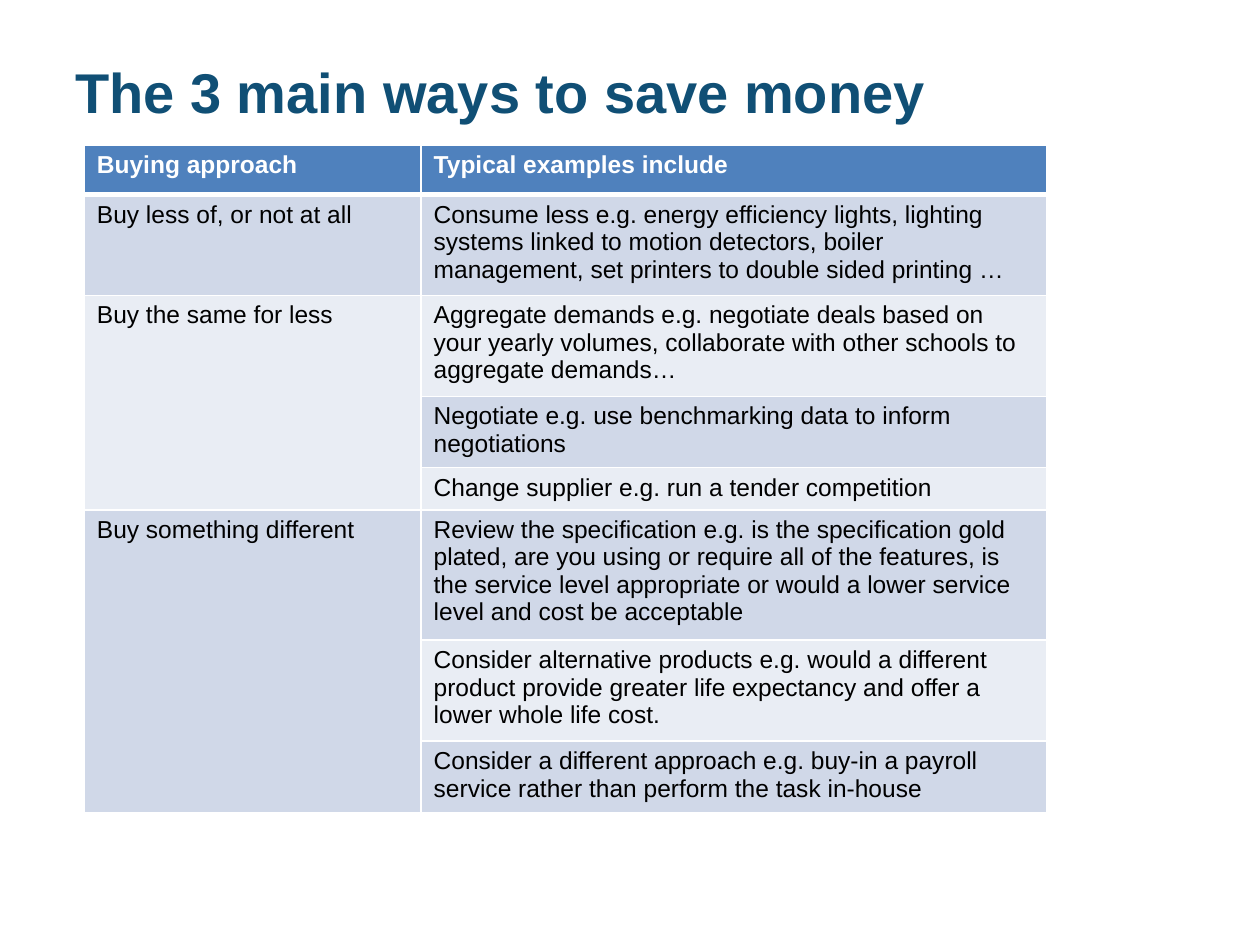
from dataclasses import dataclass

from lxml.etree import SubElement
from pptx import Presentation
from pptx.dml.color import RGBColor
from pptx.enum.text import MSO_ANCHOR
from pptx.oxml.ns import qn
from pptx.util import Cm, Pt


@dataclass(frozen=True)
class Theme:
    font: str = "Arial"
    title_size: int = 32
    table_size: int = 14
    title: str = "104F75"
    header: str = "4F81BD"
    dark_band: str = "D0D8E8"
    light_band: str = "E9EDF4"
    text: str = "000000"
    white: str = "FFFFFF"
    line: int = 1
    header_line: int = 3


THEME = Theme()
HEADINGS = ("Buying approach", "Typical examples include")
APPROACHES = (
    ("Buy less of, or not at all", (
        "Consume less e.g. energy efficiency lights, lighting systems linked to motion "
        "detectors, boiler management, set printers to double sided printing …",
    )),
    ("Buy the same for less", (
        "Aggregate demands e.g. negotiate deals based on your yearly volumes, "
        "collaborate with other schools to aggregate demands…",
        "Negotiate e.g. use benchmarking data to inform negotiations",
        "Change supplier e.g. run a tender competition",
    )),
    ("Buy something different", (
        "Review the specification e.g. is the specification gold plated, are you using or "
        "require all of the features, is the service level appropriate or would a lower "
        "service level and cost be acceptable",
        "Consider alternative products e.g. would a different product provide greater life "
        "expectancy and offer a lower whole life cost.",
        "Consider a different approach e.g. buy-in a payroll service rather than perform "
        "the task in-house",
    )),
)
COLUMN_SHARES = (0.35, 0.65)
ROW_HEIGHTS = (0.99, 1.93, 1.93, 1.36, 0.81, 2.48, 1.92, 1.36)


def write_text(frame, text, size, color, bold=False):
    span = frame.paragraphs[0].add_run()
    span.text = text
    span.font.name = THEME.font
    span.font.size = Pt(size)
    span.font.bold = bold
    span.font.color.rgb = RGBColor.from_string(color)


def style_cell(cell, fill, bottom=THEME.line, top=THEME.line):
    properties = cell._tc.get_or_add_tcPr()
    widths = {"a:lnL": THEME.line, "a:lnR": THEME.line, "a:lnT": top, "a:lnB": bottom}
    for side, width in widths.items():
        border = SubElement(properties, qn(side), w=str(Pt(width)))
        solid = SubElement(border, qn("a:solidFill"))
        SubElement(solid, qn("a:srgbClr"), val=THEME.white)
    cell.fill.solid()
    cell.fill.fore_color.rgb = RGBColor.from_string(fill)


def add_title(page, left, top, width, height):
    box = page.shapes.add_textbox(Cm(left), Cm(top), Cm(width), Cm(height))
    box.text_frame.word_wrap = True
    box.text_frame.vertical_anchor = MSO_ANCHOR.MIDDLE
    write_text(box.text_frame, "The 3 main ways to save money",
               THEME.title_size, THEME.title, bold=True)


def add_approach_table(page, left, top, width):
    frame = page.shapes.add_table(len(ROW_HEIGHTS), len(HEADINGS), Cm(left), Cm(top),
                                  Cm(width), Cm(sum(ROW_HEIGHTS)))
    table = frame.table
    for column, share in zip(table.columns, COLUMN_SHARES):
        column.width = Cm(width * share)
    for row, height in zip(table.rows, ROW_HEIGHTS):
        row.height = Cm(height)

    for index, heading in enumerate(HEADINGS):
        cell = table.cell(0, index)
        style_cell(cell, THEME.header, bottom=THEME.header_line)
        write_text(cell.text_frame, heading, THEME.table_size, THEME.white, bold=True)

    row_index = 1
    for approach, examples in APPROACHES:
        first = table.cell(row_index, 0)
        for example in examples:
            band = THEME.dark_band if row_index % 2 else THEME.light_band
            line_above = THEME.header_line if row_index == 1 else THEME.line
            for column_index in range(len(HEADINGS)):
                style_cell(table.cell(row_index, column_index), band, top=line_above)
            write_text(table.cell(row_index, 1).text_frame, example,
                       THEME.table_size, THEME.text)
            row_index += 1
        write_text(first.text_frame, approach, THEME.table_size, THEME.text)
        if len(examples) > 1:
            first.merge(table.cell(row_index - 1, 0))


def main():
    deck = Presentation()
    deck.slide_width, deck.slide_height = Cm(25.4), Cm(19.05)
    page = deck.slides.add_slide(deck.slide_layouts[6])
    add_title(page, left=1.27, top=0.76, width=22.86, height=2.16)
    add_approach_table(page, left=1.7, top=2.93, width=19.4)
    deck.save("out.pptx")


if __name__ == "__main__":
    main()
